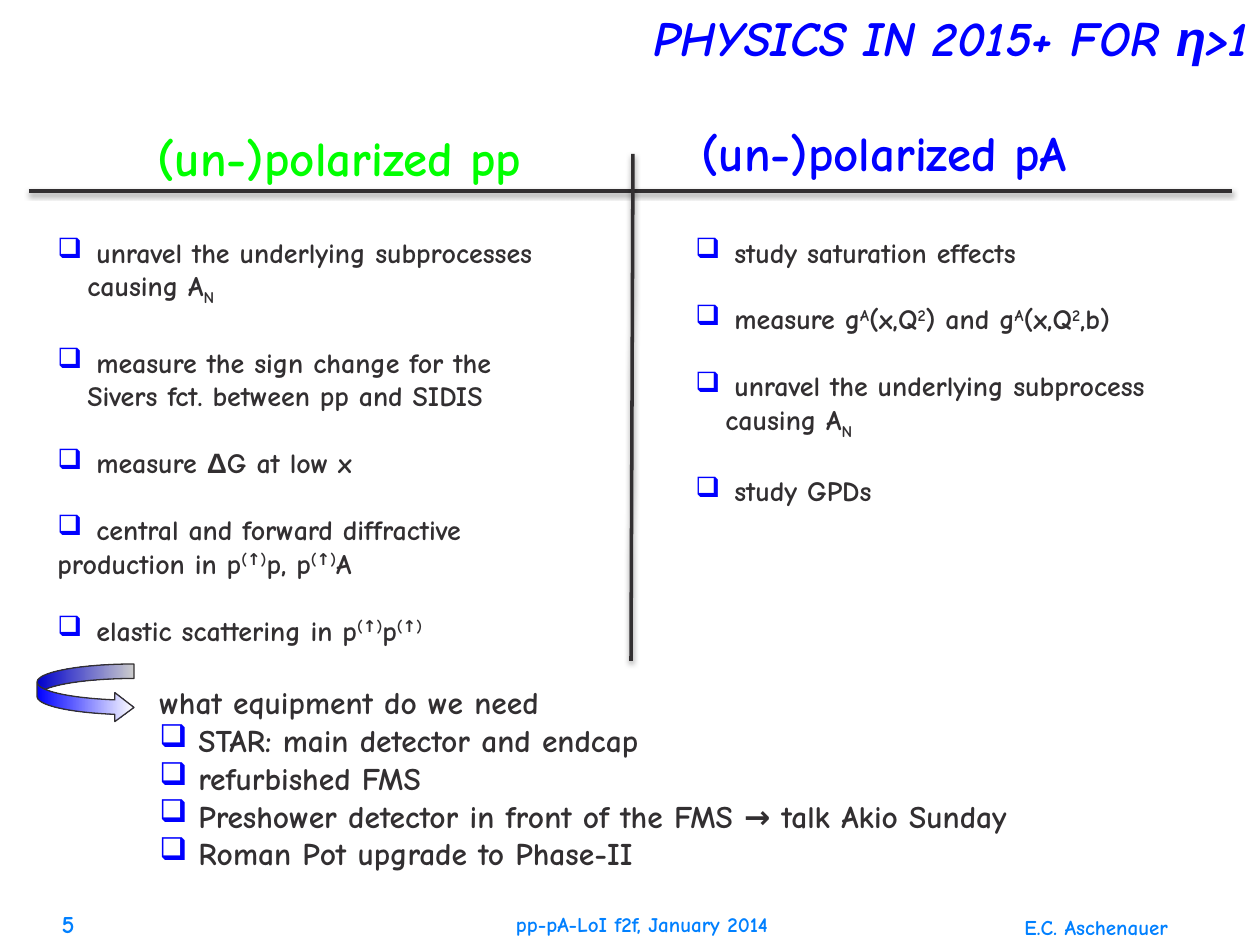
from lxml.etree import SubElement
from pptx import Presentation
from pptx.dml.color import RGBColor
from pptx.enum.shapes import MSO_CONNECTOR, MSO_SHAPE
from pptx.enum.text import MSO_ANCHOR, PP_ALIGN
from pptx.oxml.ns import qn
from pptx.util import Emu, Pt

BLUE = RGBColor(0x00, 0x00, 0xFF)
GREEN = RGBColor(0x00, 0xFF, 0x00)
SKY = RGBColor(0x00, 0x80, 0xFF)
DARK = RGBColor(0x32, 0x2F, 0x31)
WHITE = RGBColor(0xFF, 0xFF, 0xFF)

FONT = "Comic Neue"
GREEK_FONT = "Arial"
HANG = 39  # bullet to text
WRAPPED = 30  # indent of a continued line
GAP = 19  # points between items

# Span styles
SUB, SUP, GREEK = "sub", "sup", "greek"
BASELINES = {SUB: "-25000", SUP: "30000"}
UP = ("(↑)", SUP)
A_N = ["causing A", ("N", SUB)]
NUCLEAR = ("A", SUP)
SQUARED = ("2", SUP)


def px(length):
    return Emu(round(length * 914400 / 126))


def add_spans(para, spans, size, color, italic=False):
    for item in spans:
        text, style = (item, None) if isinstance(item, str) else item
        span = para.add_run()
        span.text = text
        font = span.font
        font.name = GREEK_FONT if style == GREEK else FONT
        font.size = Pt(size)
        font.bold = True
        font.italic = italic
        font.color.rgb = color
        if style in BASELINES:
            span._r.get_or_add_rPr().set("baseline", BASELINES[style])


def add_box(page, left, top, width, height, anchor=MSO_ANCHOR.TOP):
    box = page.shapes.add_textbox(px(left), px(top), px(width), px(height))
    frame = box.text_frame
    frame.word_wrap = True
    frame.vertical_anchor = anchor
    return frame


def add_label(page, place, spans, size, color, anchor=MSO_ANCHOR.TOP,
              align=PP_ALIGN.LEFT, italic=False):
    para = add_box(page, *place, anchor).paragraphs[0]
    para.alignment = align
    add_spans(para, spans, size, color, italic)
    return para


def set_indent(para, left, first=0):
    properties = para._p.get_or_add_pPr()
    properties.set("marL", str(px(left)))
    properties.set("indent", str(px(first)))
    return properties


def add_bullet(para):
    properties = set_indent(para, HANG, -HANG)
    color = SubElement(properties, qn("a:buClr"))
    SubElement(color, qn("a:srgbClr")).set("val", str(BLUE))
    SubElement(properties, qn("a:buChar")).set("char", "❑")


def add_list(page, place, lines, size):
    """Each line is (indent, space before, spans); an indent of None is a bullet."""
    frame = add_box(page, *place)
    for index, (indent, before, spans) in enumerate(lines):
        para = frame.add_paragraph() if index else frame.paragraphs[0]
        para.space_before = Pt(before)
        if indent is None:
            add_bullet(para)
        else:
            set_indent(para, indent)
        add_spans(para, spans, size, DARK)


def add_rule(page, x1, y1, x2, y2):
    rule = page.shapes.add_connector(
        MSO_CONNECTOR.STRAIGHT, px(x1), px(y1), px(x2), px(y2))
    rule.line.color.rgb = DARK
    rule.line.width = Pt(2)
    effects = SubElement(rule._element.spPr, qn("a:effectLst"))
    shadow = SubElement(effects, qn("a:outerShdw"), blurRad=str(Pt(3.1)),
                        dist=str(Pt(1.6)), dir="5400000", rotWithShape="0")
    color = SubElement(shadow, qn("a:srgbClr"), val="000000")
    SubElement(color, qn("a:alpha"), val="38000")


def add_curved_arrow(page, left, top, width, height):
    arrow = page.shapes.add_shape(
        MSO_SHAPE.CURVED_RIGHT_ARROW, px(left), px(top), px(width), px(height))
    arrow.shadow.inherit = False
    for index, value in enumerate((0.25, 0.5, 0.33)):
        arrow.adjustments[index] = value
    arrow.fill.gradient()
    arrow.fill.gradient_angle = 0
    for stop, position, color in zip(arrow.fill.gradient_stops, (0, 1), (BLUE, WHITE)):
        stop.position = position
        stop.color.rgb = color
    arrow.line.color.rgb = DARK
    arrow.line.width = Pt(0.75)


def main():
    deck = Presentation()
    deck.slide_width, deck.slide_height = px(1260), px(945)
    page = deck.slides.add_slide(deck.slide_layouts[6])

    # Title
    title = add_label(page, (105, 0, 1155, 84),
                      ["PHYSICS IN 2015+ FOR ", ("η", GREEK), ">1"], 28, BLUE,
                      MSO_ANCHOR.MIDDLE, PP_ALIGN.RIGHT, italic=True)
    title.line_spacing = 0.8

    # Footer
    for place, text, size, align in (
        ((1012, 893, 231, 53), "E.C. Aschenauer", 12, PP_ALIGN.LEFT),
        ((378, 893, 528, 50), "pp-pA-LoI f2f, January 2014", 12, PP_ALIGN.CENTER),
        ((3, 895, 84, 50), "5", 14, PP_ALIGN.RIGHT),
    ):
        add_label(page, place, [text], size, SKY, MSO_ANCHOR.BOTTOM, align)

    # Column headings and rules
    add_label(page, (145, 121, 432, 72), ["(un-)polarized pp"], 28, GREEN)
    add_label(page, (689, 116, 442, 72), ["(un-)polarized pA"], 28, BLUE)
    add_rule(page, 29, 191, 1232, 191)
    add_rule(page, 633, 154, 631, 661)

    # Proton-proton topics
    add_list(page, (45, 229, 554, 442), [
        (None, 0, ["unravel the underlying subprocesses"]),
        (WRAPPED, 0, A_N),
        (None, 22, ["measure the sign change for the"]),
        (WRAPPED, 0, ["Sivers fct. between pp and SIDIS"]),
        (None, GAP, ["measure ", ("Δ", GREEK), "G at low x"]),
        (None, GAP, ["central and forward diffractive"]),
        (0, 0, ["production in p", UP, "p, p", UP, "A"]),
        (None, GAP, ["elastic scattering in p", UP, "p", UP]),
    ], 16)

    # Proton-nucleus topics
    add_list(page, (683, 229, 525, 273), [
        (None, 0, ["study saturation effects"]),
        (None, GAP, ["measure g", NUCLEAR, "(x,Q", SQUARED, ") and g",
                     NUCLEAR, "(x,Q", SQUARED, ",b)"]),
        (None, GAP, ["unravel the underlying subprocess"]),
        (WRAPPED, 0, A_N),
        (None, GAP, ["study GPDs"]),
    ], 16)

    # Equipment
    add_curved_arrow(page, 37, 664, 97, 58)
    equipment = [
        "STAR: main detector and endcap",
        "refurbished FMS",
        "Preshower detector in front of the FMS → talk Akio Sunday",
        "Roman Pot upgrade to Phase-II",
    ]
    add_list(page, (147, 677, 1017, 204),
             [(0, 0, ["what equipment do we need"])]
             + [(None, 0, [text]) for text in equipment], 18)

    deck.save("out.pptx")


if __name__ == "__main__":
    main()
